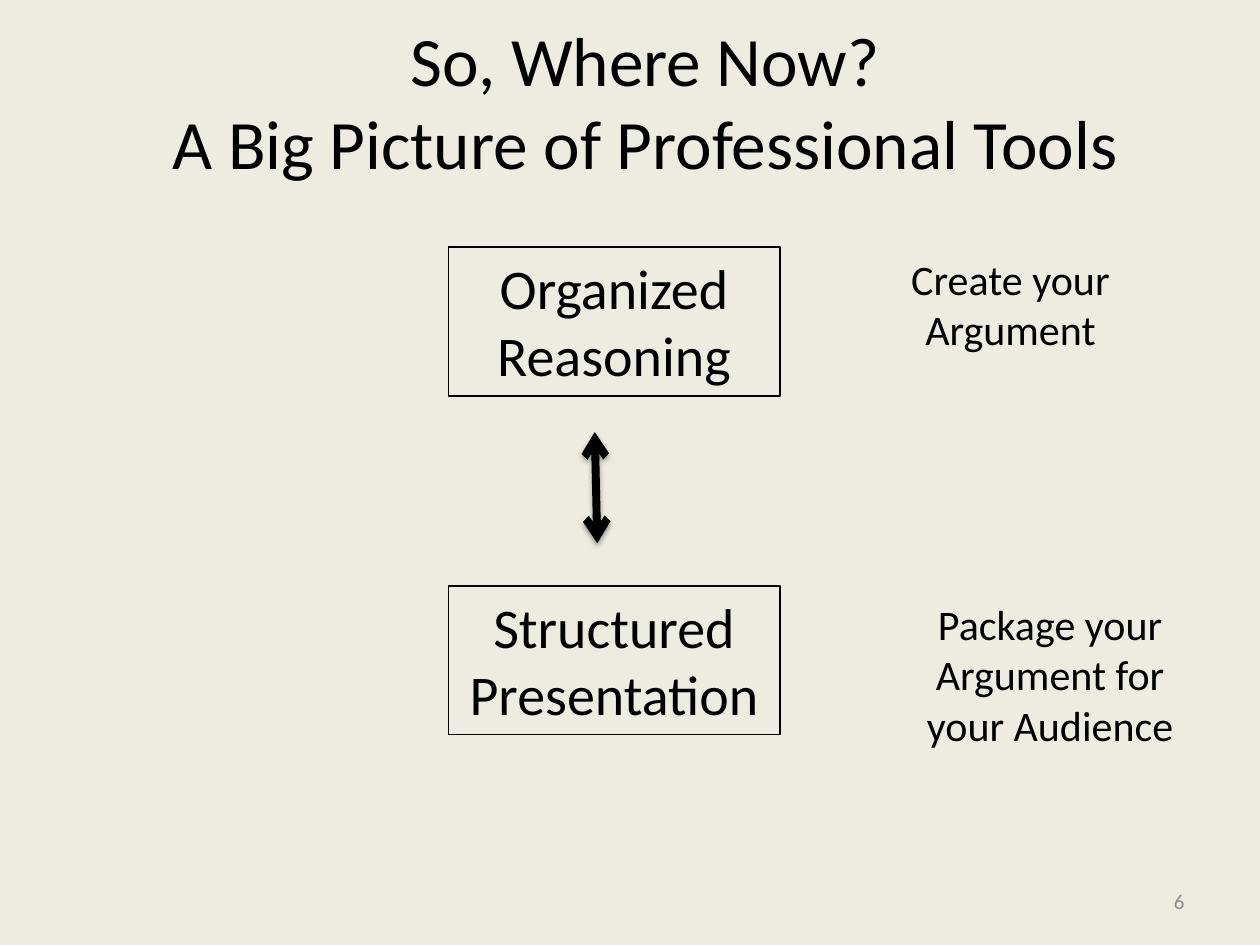
from lxml.etree import SubElement
from pptx import Presentation
from pptx.dml.color import RGBColor as Rgb
from pptx.enum.shapes import MSO_CONNECTOR as Connector, MSO_SHAPE as Shape
from pptx.enum.text import MSO_ANCHOR as Anchor, PP_ALIGN as Align
from pptx.oxml.ns import qn
from pptx.util import Cm, Pt

COLORS = {"paper": "EEECE1", "ink": "000000", "muted": "8C8C8C"}


def color(name):
    return Rgb.from_string(COLORS[name])


def write(box, text, size=24, ink="ink", align=Align.CENTER, anchor=Anchor.TOP, font="Calibri"):
    frame = box.text_frame
    frame.word_wrap = True
    frame.vertical_anchor = anchor
    para = frame.paragraphs[0]
    para.text = text
    para.alignment = align
    for span in para.runs:
        span.font.name = font
        span.font.size = Pt(size)
        span.font.color.rgb = color(ink)


class Builder:
    def __init__(self, deck):
        self.page = deck.slides.add_slide(deck.slide_layouts[6])
        fill = self.page.background.fill
        fill.solid()
        fill.fore_color.rgb = color("paper")

    def label(self, text, left, top, width, height, **style):
        box = self.page.shapes.add_textbox(Cm(left), Cm(top), Cm(width), Cm(height))
        write(box, text, **style)

    def frame(self, text, left, top, width, height, **style):
        box = self.page.shapes.add_shape(
            Shape.RECTANGLE, Cm(left), Cm(top), Cm(width), Cm(height))
        box.shadow.inherit = False
        box.fill.background()
        box.line.color.rgb = color("ink")
        box.line.width = Pt(1)
        write(box, text, **style)

    def double_arrow(self, start, end, width):
        arrow = self.page.shapes.add_connector(
            Connector.STRAIGHT, *(Cm(value) for value in start + end))
        arrow.line.color.rgb = color("ink")
        arrow.line.width = Pt(width)
        outline = arrow.line._get_or_add_ln()
        for tip in ("a:headEnd", "a:tailEnd"):
            SubElement(outline, qn(tip), type="arrow")
        effects = SubElement(arrow._element.spPr, qn("a:effectLst"))
        shadow = SubElement(
            effects, qn("a:outerShdw"), blurRad=str(Pt(3.1)), dist=str(Pt(1.6)),
            dir="5400000", rotWithShape="0")
        tint = SubElement(shadow, qn("a:srgbClr"), val=COLORS["ink"])
        SubElement(tint, qn("a:alpha"), val="38000")


def main():
    deck = Presentation()
    deck.slide_width, deck.slide_height = Cm(25.4), Cm(19.05)
    page = Builder(deck)
    page.label("So, Where Now?\vA Big Picture of Professional Tools",
               1.68, 0.43, 22.66, 3.18, size=39.6, anchor=Anchor.MIDDLE)
    for text, top in (("Organized Reasoning", 4.98), ("Structured Presentation", 11.81)):
        page.frame(text, 9.04, top, 6.68, 3, size=32)
    page.double_arrow((11.99, 8.71), (12.04, 10.95), 4.5)
    page.label("Create your Argument", 17.88, 4.98, 4.98, 2.31)
    page.label("Package your Argument for your Audience", 18.21, 11.94, 5.92, 3.33)
    page.label("6", 18.21, 17.65, 5.92, 1.02, size=12, ink="muted",
               align=Align.RIGHT, anchor=Anchor.MIDDLE)
    deck.save("out.pptx")


if __name__ == "__main__":
    main()
